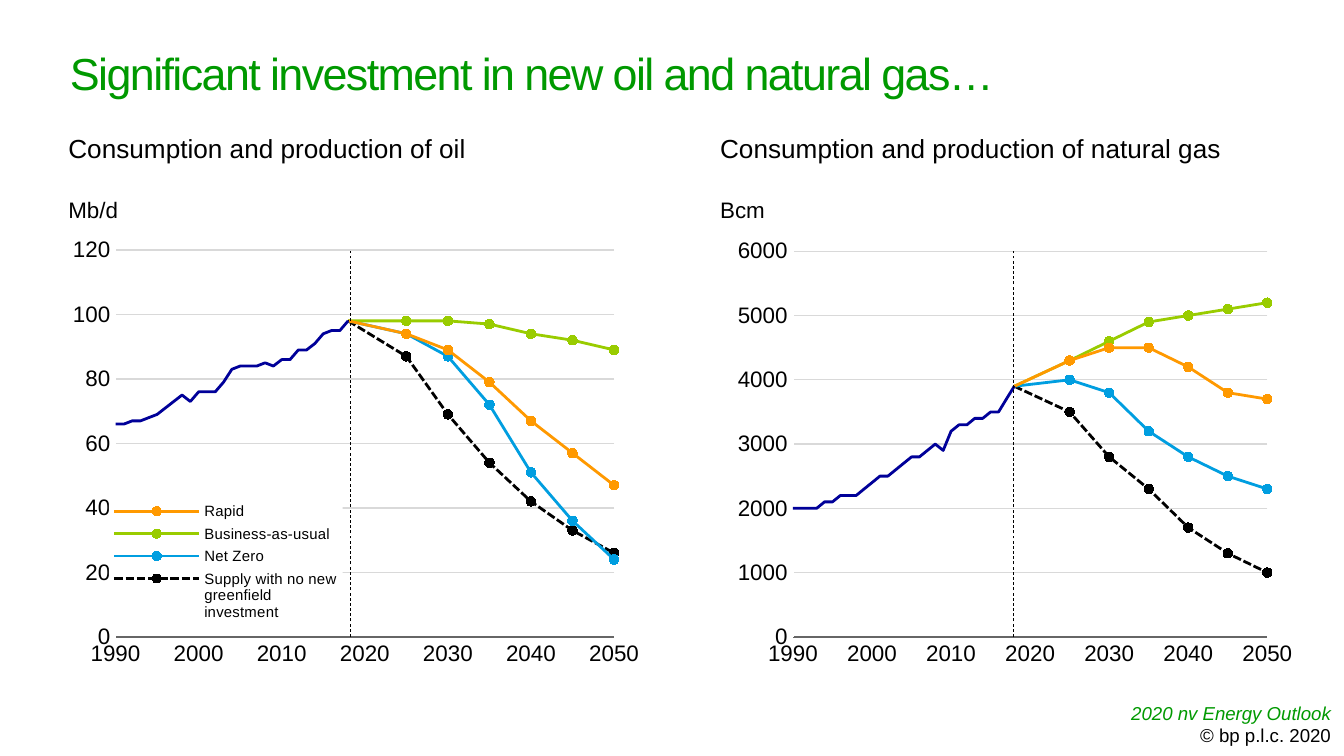
import pptx
import pptx.chart.data
import pptx.dml.color
import pptx.enum.chart
import pptx.enum.dml
import pptx.enum.shapes
import pptx.enum.text
import pptx.oxml
import pptx.oxml.ns
import pptx.util
from lxml import etree
from pptx.util import Inches

COLORS = {
    "title": "009900",
    "text": "000000",
    "history": "000099",
    "rapid": "FF9900",
    "usual": "99CC00",
    "net_zero": "009EE0",
    "supply": "000000",
    "axis": "666666",
    "grid": "D9D9D9",
    "white": "FFFFFF",
}
FONT = "Arial"
CHART_HEIGHT = 3.51
HISTORY_YEARS = list(range(1990, 2019))
OUTLOOK_YEARS = [2018, *range(2025, 2051, 5)]
SERIES_COLORS = ["history", "rapid", "usual", "net_zero", "supply"]

OIL = {
    "Series 1": [66, 66, 67, 67, 68, 69, 71, 73, 75, 73, 76, 76, 76, 79, 83, 84, 84, 84, 85,
                 84, 86, 86, 89, 89, 91, 94, 95, 95, 98],
    "Rapid": [98, 94, 89, 79, 67, 57, 47],
    "Business-as-usual": [98, 98, 98, 97, 94, 92, 89],
    "Net Zero": [98, 94, 87, 72, 51, 36, 24],
    "Supply with no new greenfield investment": [98, 87, 69, 54, 42, 33, 26],
}
GAS = {
    "Series 1": [2000, 2000, 2000, 2000, 2100, 2100, 2200, 2200, 2200, 2300, 2400, 2500, 2500,
                 2600, 2700, 2800, 2800, 2900, 3000, 2900, 3200, 3300, 3300, 3400, 3400, 3500,
                 3500, 3700, 3900],
    "Series 2": [3900, 4300, 4500, 4500, 4200, 3800, 3700],
    "Series 3": [3900, 4300, 4600, 4900, 5000, 5100, 5200],
    "Series 4": [3900, 4000, 3800, 3200, 2800, 2500, 2300],
    "Series 5": [3900, 3500, 2800, 2300, 1700, 1300, 1000],
}


def rgb(name):
    return pptx.dml.color.RGBColor.from_string(COLORS[name])


def style_font(font, size, color="text", italic=False):
    font.name = FONT
    font.size = pptx.util.Pt(size)
    font.color.rgb = rgb(color)
    font.italic = italic


def style_line(line, color, width):
    line.color.rgb = rgb(color)
    line.width = pptx.util.Pt(width)


def add_run(paragraph, text, size, color="text", italic=False):
    run = paragraph.add_run()
    run.text = text
    style_font(run.font, size, color, italic)
    return run


def add_title(slide, text):
    title = slide.shapes.title
    title.left, title.top = Inches(0.52), Inches(0.31)
    title.width, title.height = Inches(9.21), Inches(0.45)
    frame = title.text_frame
    frame.margin_left = frame.margin_right = frame.margin_top = frame.margin_bottom = 0
    frame.vertical_anchor = pptx.enum.text.MSO_ANCHOR.TOP
    paragraph = frame.paragraphs[0]
    paragraph.alignment = pptx.enum.text.PP_ALIGN.LEFT
    paragraph.line_spacing = pptx.util.Pt(31)
    run = add_run(paragraph, text, 24, "title")
    run._r.get_or_add_rPr().set("spc", "-85")


def add_label(slide, text, left, top, width, height, size):
    box = slide.shapes.add_textbox(Inches(left), Inches(top), Inches(width), Inches(height))
    box.text_frame.word_wrap = True
    paragraph = box.text_frame.paragraphs[0]
    paragraph.line_spacing = pptx.util.Pt(18.8)
    add_run(paragraph, text, size)


def add_footer(slide):
    box = slide.shapes.add_textbox(Inches(8.3), Inches(5.17), Inches(1.7), Inches(0.44))
    frame = box.text_frame
    frame.word_wrap = False
    source = frame.paragraphs[0]
    add_run(source, "2020 nv Energy Outlook", 10, "title", True)
    rights = frame.add_paragraph()
    add_run(rights, "© bp p.l.c. 2020", 10)
    for paragraph in frame.paragraphs:
        paragraph.alignment = pptx.enum.text.PP_ALIGN.RIGHT


def set_layout(parent, index, bounds, chart_width, inner=False):
    qn = pptx.oxml.ns.qn
    for layout in parent.findall(qn("c:layout")):
        parent.remove(layout)
    layout = etree.Element(qn("c:layout"))
    manual = etree.SubElement(layout, qn("c:manualLayout"))
    settings = [("layoutTarget", "inner")] if inner else []
    settings += [("xMode", "edge"), ("yMode", "edge")]
    for tag, length, full in zip("xywh", bounds, (chart_width, CHART_HEIGHT) * 2):
        settings.append((tag, str(length / full)))
    for tag, value in settings:
        etree.SubElement(manual, qn(f"c:{tag}")).set("val", value)
    parent.insert(index, layout)


def style_axis(axis, color, maximum, major, minimum=0):
    axis.minimum_scale, axis.maximum_scale = minimum, maximum
    axis.major_unit = major
    axis.major_tick_mark = axis.minor_tick_mark = pptx.enum.chart.XL_TICK_MARK.NONE
    axis.tick_labels.number_format = "0"
    axis.tick_labels.number_format_is_linked = False
    style_font(axis.tick_labels.font, 12)
    style_line(axis.format.line, color, 0.75)


def style_stroke(item, color):
    style_line(item.format.line, color, 1.5)
    if color == "supply":
        item.format.line.dash_style = pptx.enum.dml.MSO_LINE.SQUARE_DOT


def style_series(series, color):
    series.smooth = False
    style_stroke(series, color)
    marker = series.marker
    if color == "history":
        marker.style = pptx.enum.chart.XL_MARKER_STYLE.NONE
        return
    marker.style = pptx.enum.chart.XL_MARKER_STYLE.CIRCLE
    marker.size = 5
    marker.format.fill.solid()
    marker.format.fill.fore_color.rgb = rgb(color)
    marker.format.line.fill.background()
    start = series.points[0]
    start.marker.style = pptx.enum.chart.XL_MARKER_STYLE.NONE
    style_stroke(start, color)


def add_chart(slide, values, left, width, plot, maximum, major):
    data = pptx.chart.data.XyChartData()
    for name, points in values.items():
        series = data.add_series(name)
        years = HISTORY_YEARS if len(points) == len(HISTORY_YEARS) else OUTLOOK_YEARS
        for year, value in zip(years, points):
            series.add_data_point(year, value)
    frame = slide.shapes.add_chart(
        pptx.enum.chart.XL_CHART_TYPE.XY_SCATTER_LINES,
        Inches(left), Inches(1.59), Inches(width), Inches(CHART_HEIGHT), data)
    chart = frame.chart
    chart.has_title = chart.has_legend = False
    style_font(chart.font, 12)
    chart.plots[0].vary_by_categories = False
    style_axis(chart.category_axis, "axis", 2050, 10, 1990)
    style_axis(chart.value_axis, "white", maximum, major)
    chart.category_axis.has_major_gridlines = False
    chart.value_axis.has_major_gridlines = True
    style_line(chart.value_axis.major_gridlines.format.line, "grid", 0.75)
    for series, color in zip(chart.plots[0].series, SERIES_COLORS):
        style_series(series, color)
    set_layout(chart._chartSpace.chart.plotArea, 0, plot, width, True)
    return chart


def add_legend(chart, bounds, chart_width):
    chart.has_legend = True
    legend = chart.legend
    legend.position = pptx.enum.chart.XL_LEGEND_POSITION.BOTTOM
    legend.include_in_layout = True
    style_font(legend.font, 8)
    element = legend._element
    namespaces = pptx.oxml.ns.nsdecls("c", "a")
    element.insert(1, pptx.oxml.parse_xml(
        f'<c:legendEntry {namespaces}><c:idx val="0"/><c:delete val="1"/></c:legendEntry>'))
    set_layout(element, 2, bounds, chart_width)
    element.find(pptx.oxml.ns.qn("c:txPr")).addprevious(pptx.oxml.parse_xml(
        f'<c:spPr {namespaces}><a:solidFill><a:srgbClr val="{COLORS["white"]}"/>'
        '</a:solidFill></c:spPr>'))


def add_divider(slide, left):
    line = slide.shapes.add_connector(
        pptx.enum.shapes.MSO_CONNECTOR.STRAIGHT,
        Inches(left), Inches(4.74), Inches(left), Inches(1.87))
    style_line(line.line, "text", 0.4)
    line.line.dash_style = pptx.enum.dml.MSO_LINE.DASH
    etree.SubElement(line._element.spPr, pptx.oxml.ns.qn("a:effectLst"))


def main():
    presentation = pptx.Presentation()
    presentation.slide_width = Inches(10)
    presentation.slide_height = Inches(10 * 9 / 16)
    slide = presentation.slides.add_slide(presentation.slide_layouts[5])
    add_footer(slide)
    add_title(slide, "Significant investment in new oil and natural gas…")
    add_label(slide, "Consumption and production of oil", 0.41, 0.91, 3.68, 0.35, 14)
    add_label(slide, "Consumption and production of natural gas", 5.26, 0.91, 4.33, 0.35, 14)
    add_label(slide, "Bcm", 5.26, 1.35, 1.92, 0.32, 12)
    add_label(slide, "Mb/d", 0.41, 1.35, 1.92, 0.32, 12)
    oil_chart = add_chart(slide, OIL, 0.47, 4.36, (0.39, 0.27, 3.71, 2.88), 120, 20)
    add_legend(oil_chart, (0.34, 2.11, 1.74, 0.96), 4.36)
    add_divider(slide, 2.61)
    add_chart(slide, GAS, 5.19, 4.54, (0.71, 0.28, 3.53, 2.87), 6000, 1000)
    add_divider(slide, 7.54)
    presentation.save("out.pptx")


if __name__ == "__main__":
    main()
